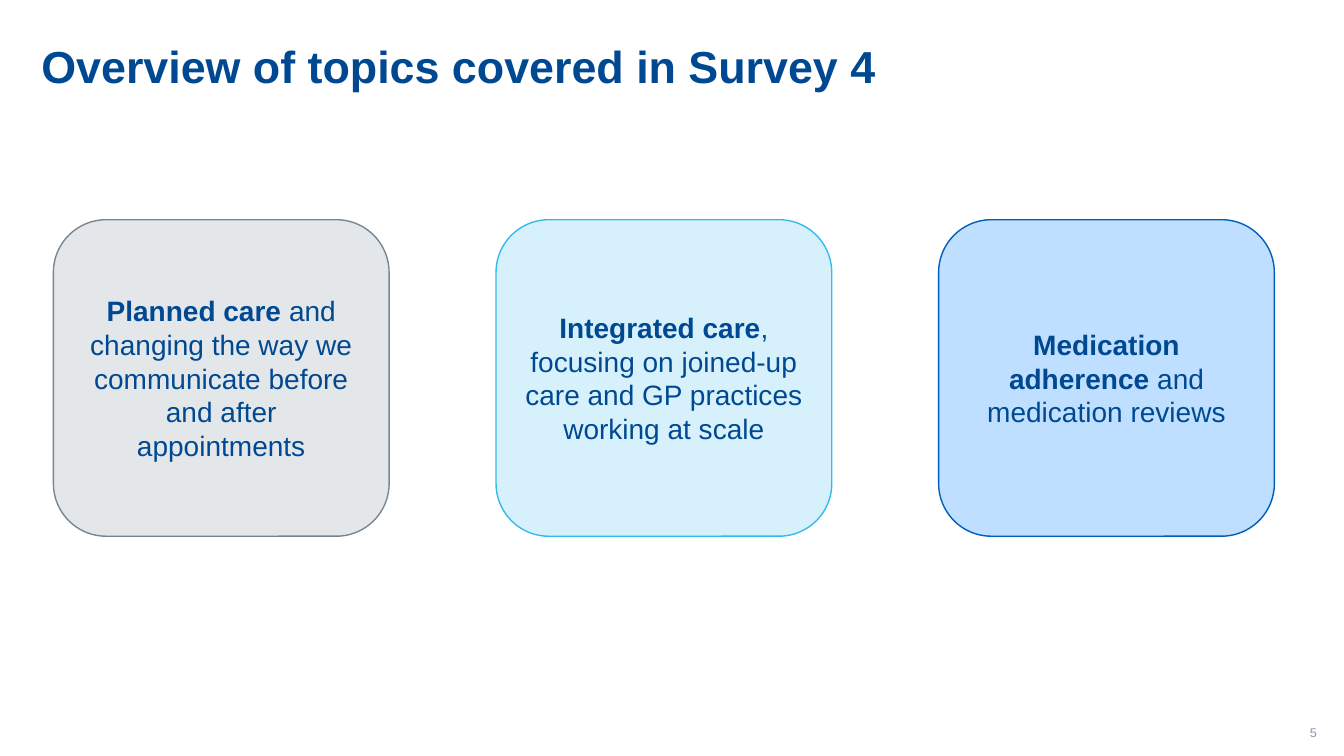
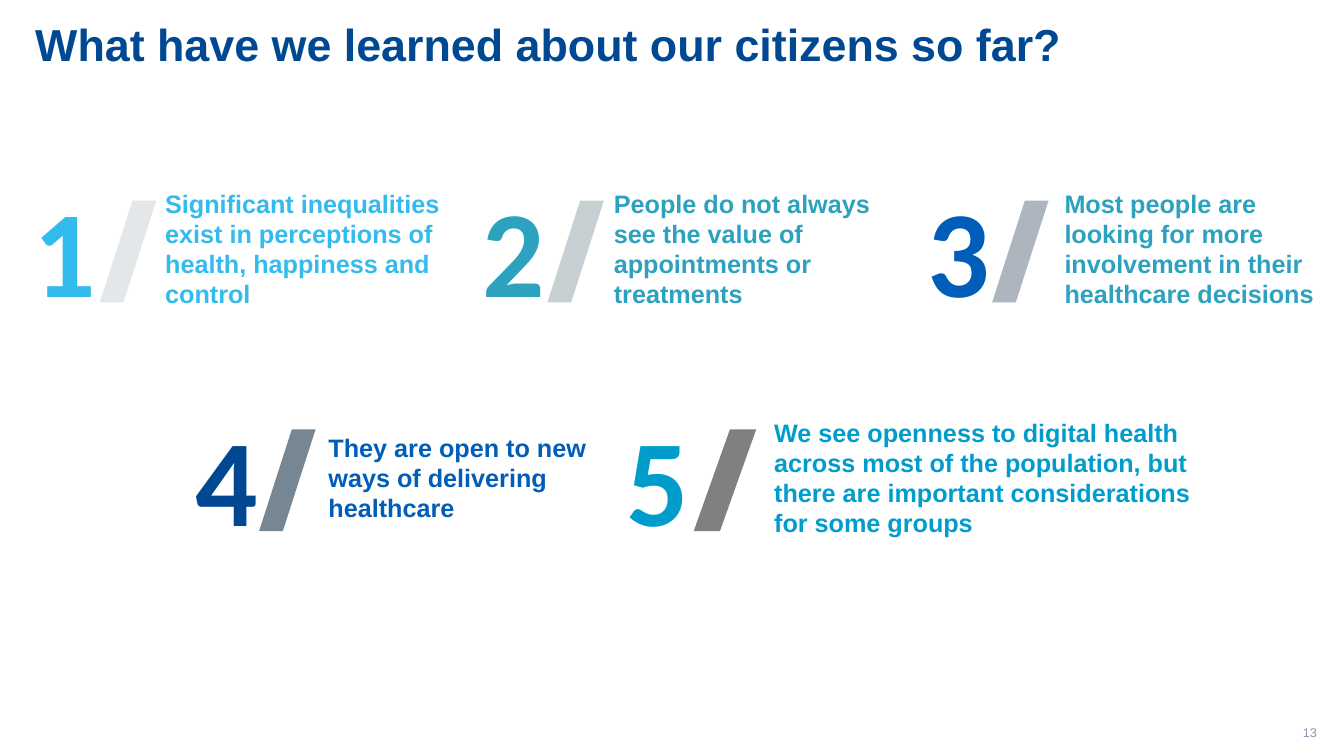
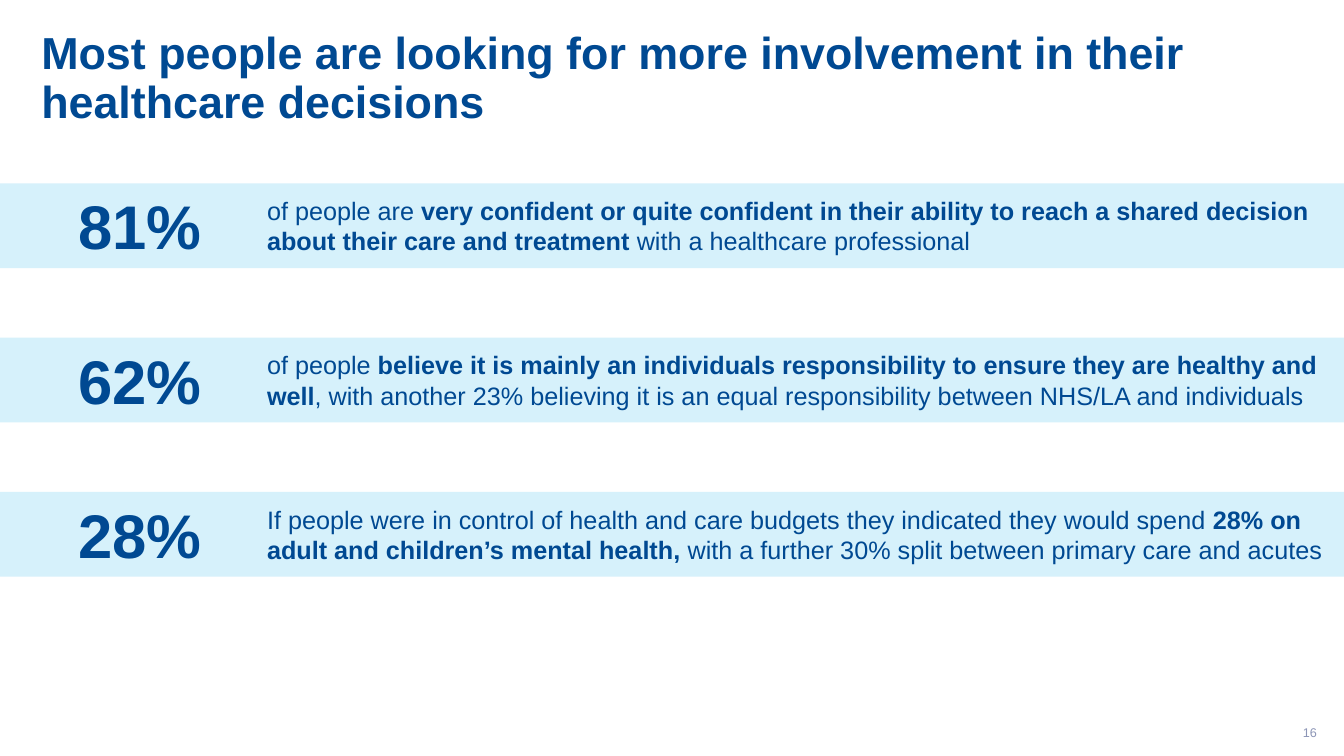
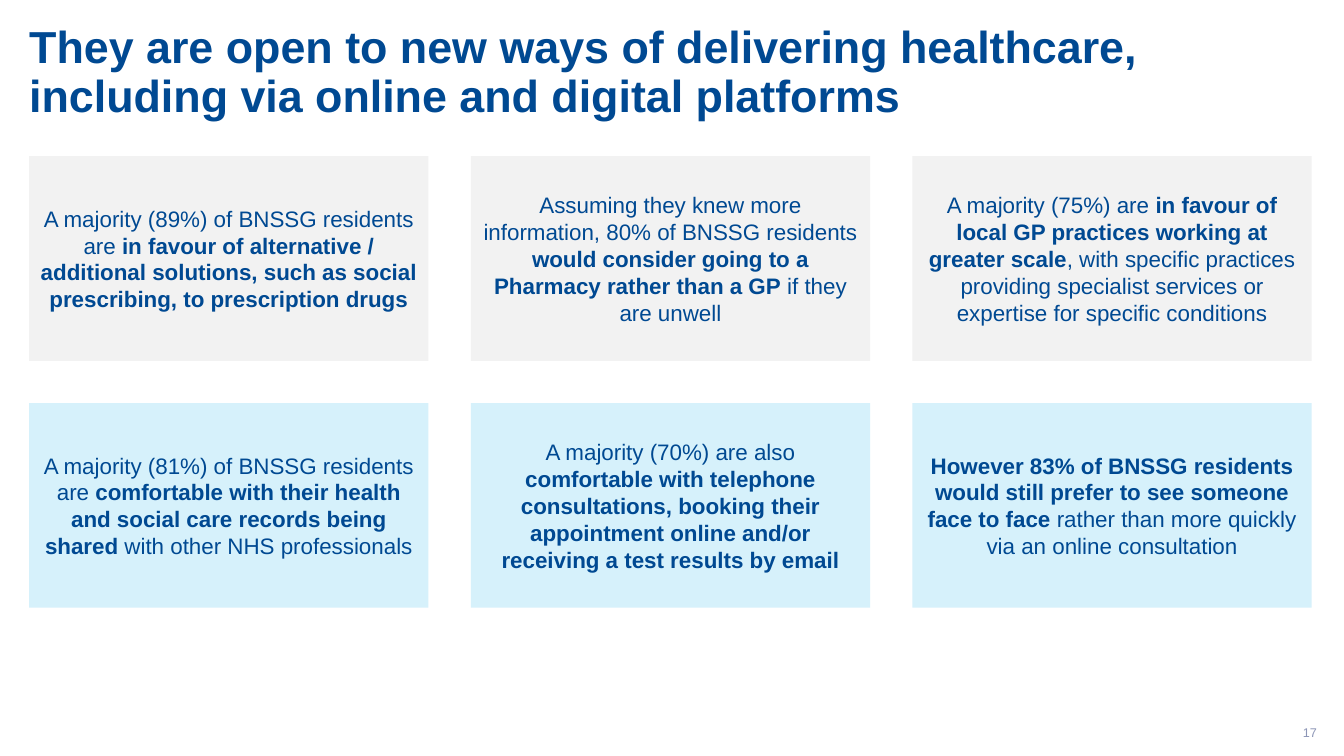
from pptx import Presentation
from pptx.dml.color import RGBColor
from pptx.enum.shapes import MSO_SHAPE as Shape
from pptx.enum.text import MSO_ANCHOR as Anchor, PP_ALIGN as Align
from pptx.util import Inches, Pt

NAVY, BLUE, SKY, TEAL, CYAN = "004992", "005EB8", "34BBED", "2DA2BF", "009DCC"
PALE_BLUE, PALE_GREY, SLATE, PAGE_GREY = "D6F1FB", "E4E7E9", "768692", "8C95B6"

# Text between ** marks is bold.
TOPICS = [  # text, fill, outline
    ("**Planned care** and changing the way we communicate before and after "
     "appointments", PALE_GREY, SLATE),
    ("**Integrated care**, focusing on joined-up care and GP practices working "
     "at scale", PALE_BLUE, SKY),
    ("**Medication adherence** and medication reviews", "BEDFFF", BLUE),
]

LESSON_ROWS = [1.81, 4.08]
LESSONS = [  # row, lefts of number, slash and text, text width, colours, text
    (0, 0.01, 0.99, 1.54, 2.93, SKY, PALE_GREY, SKY,
     "Significant inequalities exist in perceptions of health, happiness and control"),
    (0, 4.47, 5.43, 5.99, 2.76, TEAL, "C8CFD3", TEAL,
     "People do not always see the value of appointments or treatments"),
    (0, 8.88, 9.84, 10.46, 2.76, BLUE, "ADB6BE", TEAL,
     "Most people are looking for more involvement in their healthcare decisions"),
    (1, 1.62, 2.57, 3.16, 2.76, NAVY, SLATE, BLUE,
     "They are open to new ways of delivering healthcare"),
    (1, 5.89, 6.88, 7.58, 4.56, CYAN, "808080", CYAN,
     "We see openness to digital health across most of the population, but there "
     "are important considerations for some groups"),
]

FIGURES = [
    ("81%", "of people are **very confident or quite confident in their ability to "
     "reach a shared decision about their care and treatment** with a healthcare "
     "professional"),
    ("62%", "of people **believe it is mainly an individuals responsibility to ensure "
     "they are healthy and well**, with another 23% believing it is an equal "
     "responsibility between NHS/LA and individuals"),
    ("28%", "If people were in control of health and care budgets they indicated they "
     "would spend **28% on adult and children’s mental health,** with a further 30% "
     "split between primary care and acutes"),
]

ATTITUDE_ROWS = [
    ("F2F2F2", [
        "A majority (89%) of BNSSG residents are **in favour of alternative / "
        "additional solutions, such as social prescribing, to prescription drugs**",
        "Assuming they knew more information, 80% of BNSSG residents **would consider "
        "going to a Pharmacy rather than a GP** if they are unwell",
        "A majority (75%) are **in favour of local GP practices working at greater "
        "scale**, with specific practices providing specialist services or expertise "
        "for specific conditions",
    ]),
    (PALE_BLUE, [
        "A majority (81%) of BNSSG residents are **comfortable with their health and "
        "social care records being shared** with other NHS professionals",
        "A majority (70%) are also **comfortable with telephone consultations, booking "
        "their appointment online and/or receiving a test results by email**",
        "**However 83% of BNSSG residents would still prefer to see someone face to "
        "face** rather than more quickly via an online consultation",
    ]),
]


def rgb(code):
    return RGBColor.from_string(code)


def write(frame, text, size, color=NAVY, font="Arial", align=Align.LEFT,
          anchor=Anchor.TOP):
    """Fill a text frame, setting the parts between ** marks in bold."""
    frame.word_wrap = True
    frame.vertical_anchor = anchor
    paragraph = frame.paragraphs[0]
    paragraph.alignment = align
    paragraph.font.name = font
    paragraph.font.size = Pt(size)
    paragraph.font.color.rgb = rgb(color)
    for index, part in enumerate(text.split("**")):
        if part:
            run = paragraph.add_run()
            run.text = part
            run.font.bold = index % 2 == 1
    return paragraph


def add_text(slide, box, text, size, **style):
    frame = slide.shapes.add_textbox(*map(Inches, box)).text_frame
    return frame, write(frame, text, size, **style)


def add_block(slide, kind, box, fill, outline=None):
    block = slide.shapes.add_shape(kind, *map(Inches, box))
    block.shadow.inherit = False
    block.fill.solid()
    block.fill.fore_color.rgb = rgb(fill)
    if outline:
        block.line.color.rgb = rgb(outline)
        block.line.width = Pt(1)
    else:
        block.line.fill.background()
    return block


def add_slide(deck, title, left, top, page):
    slide = deck.slides.add_slide(deck.slide_layouts[6])
    add_text(slide, (10.16, 7.07, 3, 0.4), str(page), 9, color=PAGE_GREY,
             align=Align.RIGHT, anchor=Anchor.MIDDLE)
    frame, heading = add_text(slide, (left, top, 12.84, 1.13), f"**{title}**", 32)
    frame.margin_left = frame.margin_right = Inches(0.24)
    heading.line_spacing = 0.9
    return slide


def build_topics(deck):
    slide = add_slide(deck, "Overview of topics covered in Survey 4", 0.17, 0.4, 5)
    for column, (text, fill, outline) in enumerate(TOPICS):
        card = add_block(slide, Shape.ROUNDED_RECTANGLE,
                         (0.53 + column * 4.39, 2.18, 3.33, 3.14), fill, outline)
        write(card.text_frame, text, 20, align=Align.CENTER, anchor=Anchor.MIDDLE)


def build_lessons(deck):
    slide = add_slide(deck, "What have we learned about our citizens so far?",
                      0.11, 0.18, 13)
    for number, lesson in enumerate(LESSONS, 1):
        (row, number_left, slash_left, text_left, text_width,
         number_color, slash_color, text_color, text) = lesson
        top = LESSON_ROWS[row]
        add_text(slide, (text_left, top, text_width, 1.31), f"**{text}**", 18,
                 color=text_color, anchor=Anchor.MIDDLE)
        slash_width = 0.62 if number == 5 else 0.56
        slash = add_block(slide, Shape.PARALLELOGRAM,
                          (slash_left, top + 0.18, slash_width, 1.01), slash_color)
        slash.adjustments[0] = 0.58
        add_text(slide, (number_left, top - 0.13, 1.26, 1.58), f"**{number}**", 88,
                 color=number_color, font="Calibri", align=Align.CENTER)


def build_figures(deck):
    slide = add_slide(deck, "Most people are looking for more involvement in their "
                      "healthcare decisions", 0.17, 0.26, 16)
    for row, (figure, text) in enumerate(FIGURES):
        top = 1.82 + row * 1.53
        add_block(slide, Shape.RECTANGLE, (0, top, 13.33, 0.84), PALE_BLUE)
        add_text(slide, (0.48, top, 1.82, 0.84), f"**{figure}**", 44,
                 align=Align.CENTER)
        add_text(slide, (2.55, top + 0.07, 10.78, 0.71), text, 18)


def build_attitudes(deck):
    slide = add_slide(deck, "They are open to new ways of delivering healthcare, "
                      "including via online and digital platforms", 0.05, 0.2, 17)
    width, height, gap = 3.96, 2.03, 0.42
    for row, (fill, texts) in enumerate(ATTITUDE_ROWS):
        for column, text in enumerate(texts):
            box = (0.29 + column * (width + gap), 1.55 + row * (height + gap),
                   width, height)
            card = add_block(slide, Shape.RECTANGLE, box, fill)
            write(card.text_frame, text, 16, align=Align.CENTER, anchor=Anchor.MIDDLE)


def main():
    deck = Presentation()
    deck.slide_width, deck.slide_height = Inches(13.33), Inches(7.5)
    for build in (build_topics, build_lessons, build_figures, build_attitudes):
        build(deck)
    deck.save("out.pptx")


if __name__ == "__main__":
    main()
